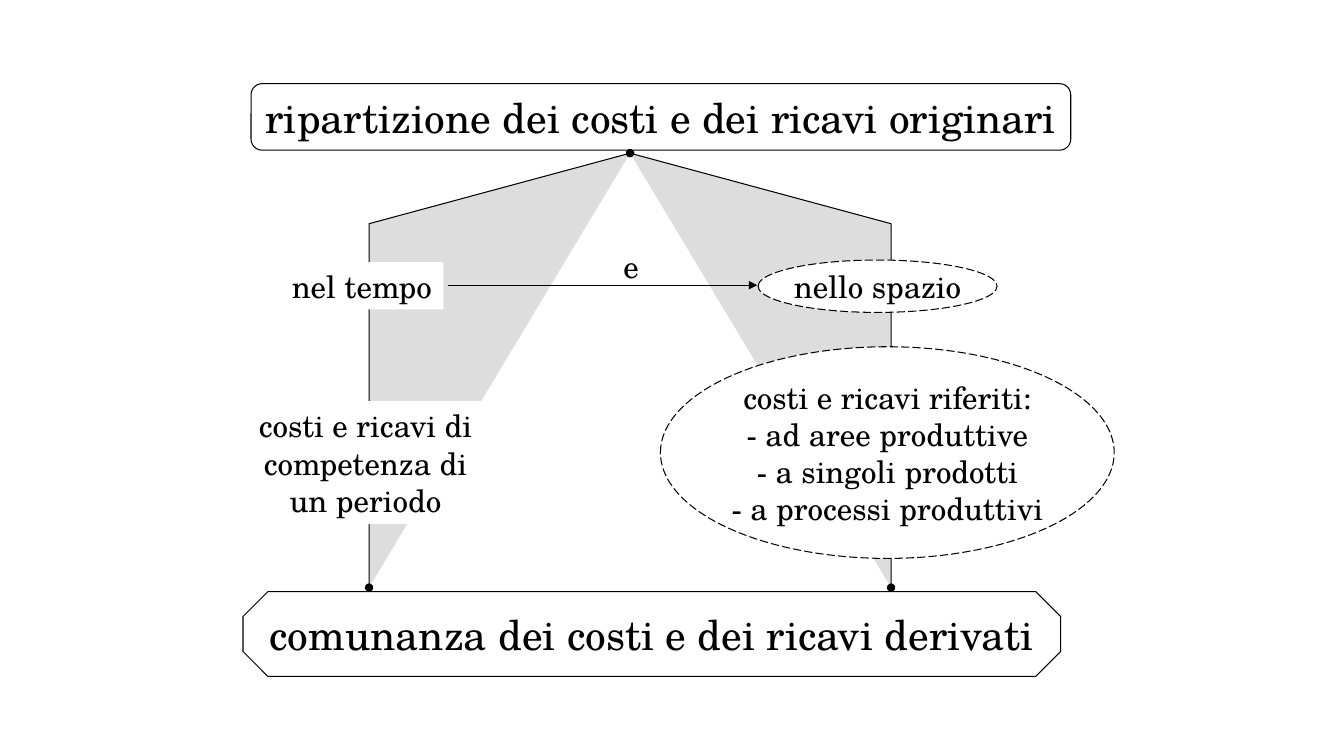
from lxml import etree
from pptx import Presentation
from pptx.dml.color import RGBColor
from pptx.enum.dml import MSO_LINE
from pptx.enum.shapes import MSO_CONNECTOR, MSO_SHAPE
from pptx.enum.text import MSO_ANCHOR, MSO_AUTO_SIZE, PP_ALIGN
from pptx.oxml.ns import qn
from pptx.util import Inches, Pt

RECT, ROUND = MSO_SHAPE.RECTANGLE, MSO_SHAPE.ROUNDED_RECTANGLE
OVAL, OCTAGON = MSO_SHAPE.OVAL, MSO_SHAPE.OCTAGON
STRAIGHT, DASH = MSO_CONNECTOR.STRAIGHT, MSO_LINE.LONG_DASH
CENTER, MIDDLE, NO_FIT = PP_ALIGN.CENTER, MSO_ANCHOR.MIDDLE, MSO_AUTO_SIZE.NONE

WIDTH, HEIGHT = Inches(13.33), Inches(7.5)
FONT, HEADING, BODY = "TeX Gyre Schola", 29.5, 22.1
BLACK, WHITE, GREY = "000000", "FFFFFF", "DDDDDD"

# Positions are percentages of the slide's width and height.
APEX_X, REACH = 46.88, 19.42
APEX_Y, SHOULDER_Y, FOOT_Y = 20.27, 29.6, 77.73
TITLE_BOX = (18.68, 11.07, 60.99, 8.8)


def across(share):
    return round(WIDTH * share / 100)


def down(share):
    return round(HEIGHT * share / 100)


def place(box):
    x, y, w, h = box
    return across(x), down(y), across(w), down(h)


def color(value):
    return RGBColor.from_string(value)


def set_line(sp, dash=None):
    sp.line.color.rgb = color(BLACK)
    sp.line.width = Pt(0.75)
    if dash:
        sp.line.dash_style = dash


def add_ends(sp, **ends):
    """Set line ends, given as headEnd and tailEnd types."""
    ln = sp.line._get_or_add_ln()
    for tag, kind in ends.items():
        etree.SubElement(ln, qn(f"a:{tag}"), type=kind)


def write(sp, lines, size, inset=0.1, wrap=False):
    tf = sp.text_frame
    tf.auto_size = NO_FIT
    tf.word_wrap = wrap
    tf.vertical_anchor = MIDDLE
    tf.margin_left = tf.margin_right = Inches(inset)
    tf.margin_top = tf.margin_bottom = Inches(min(inset, 0.05))
    for i, line in enumerate(lines):
        p = tf.add_paragraph() if i else tf.paragraphs[0]
        p.alignment = CENTER
        r = p.add_run()
        r.text = line
        r.font.name = FONT
        r.font.size = Pt(size)
        r.font.color.rgb = color(BLACK)


def add_box(slide, kind, box, fill=None, outline=True, dash=None, adjust=None):
    sp = slide.shapes.add_shape(kind, *place(box))
    sp.shadow.inherit = False
    if adjust is not None:
        sp.adjustments[0] = adjust
    if fill:
        sp.fill.solid()
        sp.fill.fore_color.rgb = color(fill)
    else:
        sp.fill.background()
    if outline:
        set_line(sp, dash)
    else:
        sp.line.fill.background()
    return sp


def add_branch(slide, side):
    """Grey branch from the apex to the foot; side is -1 or 1."""
    foot_x = across(APEX_X + side * REACH)
    builder = slide.shapes.build_freeform(across(APEX_X), down(APEX_Y))
    builder.add_line_segments(
        [(foot_x, down(SHOULDER_Y)), (foot_x, down(FOOT_Y))], close=False)
    sp = builder.convert_to_shape()
    sp.shadow.inherit = False
    sp.fill.solid()
    sp.fill.fore_color.rgb = color(GREY)
    set_line(sp)
    add_ends(sp, headEnd="oval", tailEnd="oval")


def add_arrow(slide, x1, x2, y):
    cxn = slide.shapes.add_connector(
        STRAIGHT, across(x1), down(y), across(x2), down(y))
    set_line(cxn)
    add_ends(cxn, tailEnd="triangle")
    etree.SubElement(cxn._element.spPr, qn("a:effectLst"))


def add_label(slide, box, text):
    write(slide.shapes.add_textbox(*place(box)), [text], BODY)


def main():
    prs = Presentation()
    prs.slide_width, prs.slide_height = WIDTH, HEIGHT
    slide = prs.slides.add_slide(prs.slide_layouts[5])

    title = slide.shapes.title
    title.left, title.top, title.width, title.height = place(TITLE_BOX)
    write(title, ["ripartizione dei costi e dei ricavi originari"], HEADING)

    for side in (-1, 1):
        add_branch(slide, side)
    add_box(slide, ROUND, TITLE_BOX, adjust=0.167)

    time = add_box(slide, RECT, (20.85, 34.67, 12.15, 6.27), WHITE, outline=False)
    write(time, ["nel tempo"], BODY)
    space = add_box(slide, OVAL, (56.41, 34.4, 17.78, 6.93), WHITE, dash=DASH)
    write(space, ["nello spazio"], BODY, inset=0)

    period = add_box(slide, RECT, (17.18, 53.07, 20.03, 16.27), WHITE, outline=False)
    write(period, ["costi e ricavi di competenza di un periodo"], BODY,
          inset=0.2, wrap=True)
    areas = add_box(slide, OVAL, (49.14, 45.87, 33.76, 28), WHITE, dash=DASH)
    write(areas, ["costi e ricavi riferiti:", "- ad aree produttive",
                  "- a singoli prodotti", "- a processi produttivi"], BODY, inset=0)

    derived = add_box(slide, OCTAGON, (18.08, 78.27, 60.84, 11.2), adjust=0.293)
    write(derived, ["comunanza dei costi e dei ricavi derivati"], HEADING)

    add_arrow(slide, 33.31, 56.34, 37.73)
    add_label(slide, (45.61, 32.13, 2.7, 6.27), "e")
    prs.save("out.pptx")


if __name__ == "__main__":
    main()
